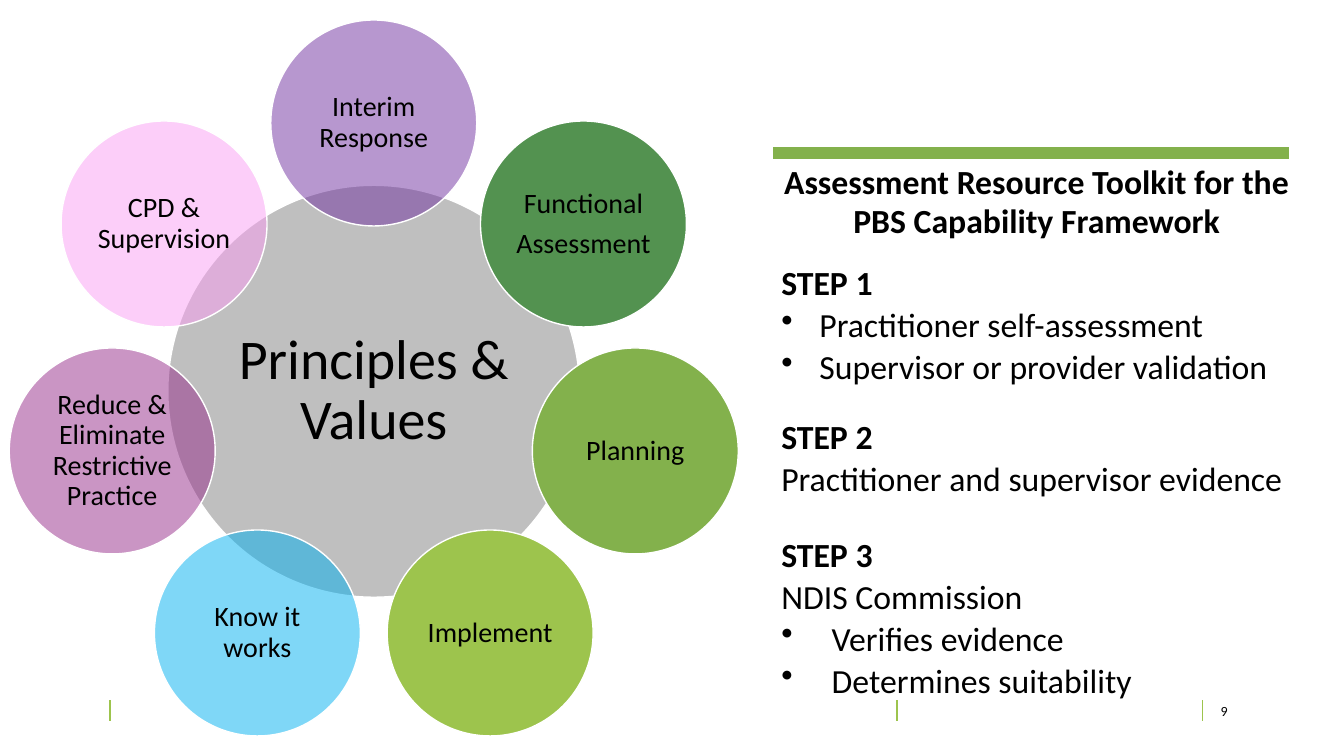
import math

import lxml.etree
import pptx
import pptx.dml.color
import pptx.enum.shapes
import pptx.enum.text
import pptx.oxml.ns
import pptx.util

Cm = pptx.util.Cm
Pt = pptx.util.Pt
SHAPES = pptx.enum.shapes.MSO_SHAPE
ALIGN = pptx.enum.text.PP_ALIGN
ANCHOR = pptx.enum.text.MSO_ANCHOR
qn = pptx.oxml.ns.qn

COLORS = {
    "white": "FFFFFF",
    "black": "000000",
    "grey": "808080",
    "purple": "7030A0",
    "forest": "539250",
    "leaf": "83B14C",
    "lime": "9DC44D",
    "sky": "00B0F0",
    "plum": "962C8B",
    "pink": "FB9FF4",
}

HUB_X, HUB_Y, HUB_SIZE = 9.42, 9.86, 10.38
RING_RADIUS, PETAL_SIZE = 6.76, 5.19
PETALS = [
    (["Interim Response"], "purple", 50),
    (["Functional", "Assessment"], "forest", 100),
    (["Planning"], "leaf", 100),
    (["Implement"], "lime", 100),
    (["Know it works"], "sky", 50),
    (["Reduce & Eliminate Restrictive Practice"], "plum", 50),
    (["CPD & Supervision"], "pink", 50),
]

STEPS = [
    ("Assessment Resource Toolkit for the PBS Capability Framework",
     dict(bold=True, align=ALIGN.CENTER, spacing=Pt(28))),
    ("STEP 1", dict(bold=True, spacing=Pt(20), before=24)),
    ("Practitioner self-assessment", dict(indent=0.96)),
    ("Supervisor or provider validation", dict(indent=0.96)),
    ("STEP 2", dict(bold=True, spacing=Pt(20), before=30)),
    ("Practitioner and supervisor evidence", {}),
    ("STEP 3", dict(bold=True, before=30)),
    ("NDIS Commission", {}),
    ("Verifies evidence", dict(indent=1.27)),
    ("Determines suitability", dict(indent=1.27)),
]


def color(name):
    return pptx.dml.color.RGBColor.from_string(COLORS[name])


def write(para, text, size=24.1, bold=False, align=ALIGN.LEFT,
          spacing=Pt(24), before=6, after=0, indent=0):
    if indent:
        properties = para._p.get_or_add_pPr()
        properties.set("marL", str(Cm(indent)))
        properties.set("indent", str(-Cm(indent)))
        lxml.etree.SubElement(properties, qn("a:buChar")).set("char", "•")
    para.alignment = align
    para.line_spacing = spacing
    para.space_before = Pt(before)
    para.space_after = Pt(after)
    span = para.add_run()
    span.text = text
    span.font.name = "Calibri"
    span.font.size = Pt(size)
    span.font.bold = bold
    span.font.color.rgb = color("black")


class SlideBuilder:
    font_size = {"hub": 40, "petal": 20, "number": 10}
    line_width = Pt(1)

    def __init__(self, page):
        self.page = page

    def fill_text(self, frame, lines, anchor, inset=0):
        frame.word_wrap = True
        frame.vertical_anchor = anchor
        frame.margin_left = frame.margin_right = Cm(inset)
        frame.margin_top = frame.margin_bottom = Cm(inset)
        for index, (text, style) in enumerate(lines):
            para = frame.add_paragraph() if index else frame.paragraphs[0]
            write(para, text, **(style if index else {**style, "before": 0}))

    def shape(self, kind, left, top, width, height, fill, outline=None):
        shape = self.page.shapes.add_shape(
            kind, Cm(left), Cm(top), Cm(width), Cm(height))
        shape.shadow.inherit = False
        shape.fill.solid()
        shape.fill.fore_color.rgb = color(fill)
        if outline:
            shape.line.color.rgb = color(outline)
            shape.line.width = self.line_width
        else:
            shape.line.fill.background()
        return shape

    def gradient_bar(self, left, top, width, height, stops):
        bar = self.shape(SHAPES.RECTANGLE, left, top, width, height, stops[0][1])
        bar.fill.gradient()
        bar.fill.gradient_angle = 0
        for stop, (position, name) in zip(bar.fill.gradient_stops, stops):
            stop.position = position
            stop.color.rgb = color(name)

    def circle(self, x, y, diameter, texts, role, fill, opacity, inset):
        circle = self.shape(SHAPES.OVAL, x - diameter / 2, y - diameter / 2,
                            diameter, diameter, fill, "white")
        if opacity < 100:
            tint = circle.fill._xPr.find(qn("a:solidFill"))[0]
            lxml.etree.SubElement(tint, qn("a:alpha")).set("val", str(opacity * 1000))
        size = self.font_size[role]
        lines = [(text, dict(size=size, align=ALIGN.CENTER, spacing=0.9, before=0,
                             after=0.35 * size if text != texts[-1] else 0))
                 for text in texts]
        self.fill_text(circle.text_frame, lines, ANCHOR.MIDDLE, inset)

    def text(self, left, top, width, height, lines, anchor=ANCHOR.TOP):
        box = self.page.shapes.add_textbox(Cm(left), Cm(top), Cm(width), Cm(height))
        self.fill_text(box.text_frame, lines, anchor)

    def tick(self, x, top, bottom):
        tick = self.page.shapes.add_connector(
            pptx.enum.shapes.MSO_CONNECTOR.STRAIGHT, Cm(x), Cm(top), Cm(x), Cm(bottom))
        tick.line.color.rgb = color("lime")
        tick.line.width = self.line_width
        lxml.etree.SubElement(tick._element.spPr, qn("a:effectLst"))


def main():
    deck = pptx.Presentation()
    deck.slide_width, deck.slide_height = Cm(33.87), Cm(19.05)
    builder = SlideBuilder(deck.slides.add_slide(deck.slide_layouts[6]))

    for x in (2.77, 22.61, 30.3):
        builder.tick(x, 17.65, 18.16)
    builder.gradient_bar(1.4, 3.71, 31.09, 0.3, [(0, "forest"), (0.5, "leaf")])
    builder.shape(SHAPES.RECTANGLE, 0, 0, 19.46, 5.05, "white", "white")

    builder.circle(HUB_X, HUB_Y, HUB_SIZE, ["Principles & Values"], "hub",
                   "grey", 50, 0.13)
    for index, (texts, fill, opacity) in enumerate(PETALS):
        angle = 2 * math.pi * index / len(PETALS)
        builder.circle(HUB_X + RING_RADIUS * math.sin(angle),
                       HUB_Y - RING_RADIUS * math.cos(angle),
                       PETAL_SIZE, texts, "petal", fill, opacity, 0.07)

    builder.text(19.69, 4.09, 12.88, 14.3, STEPS)
    number_style = dict(size=builder.font_size["number"], spacing=1.0)
    builder.text(30.76, 17.65, 1.02, 0.51, [("9", number_style)], ANCHOR.MIDDLE)
    deck.save("out.pptx")


if __name__ == "__main__":
    main()
